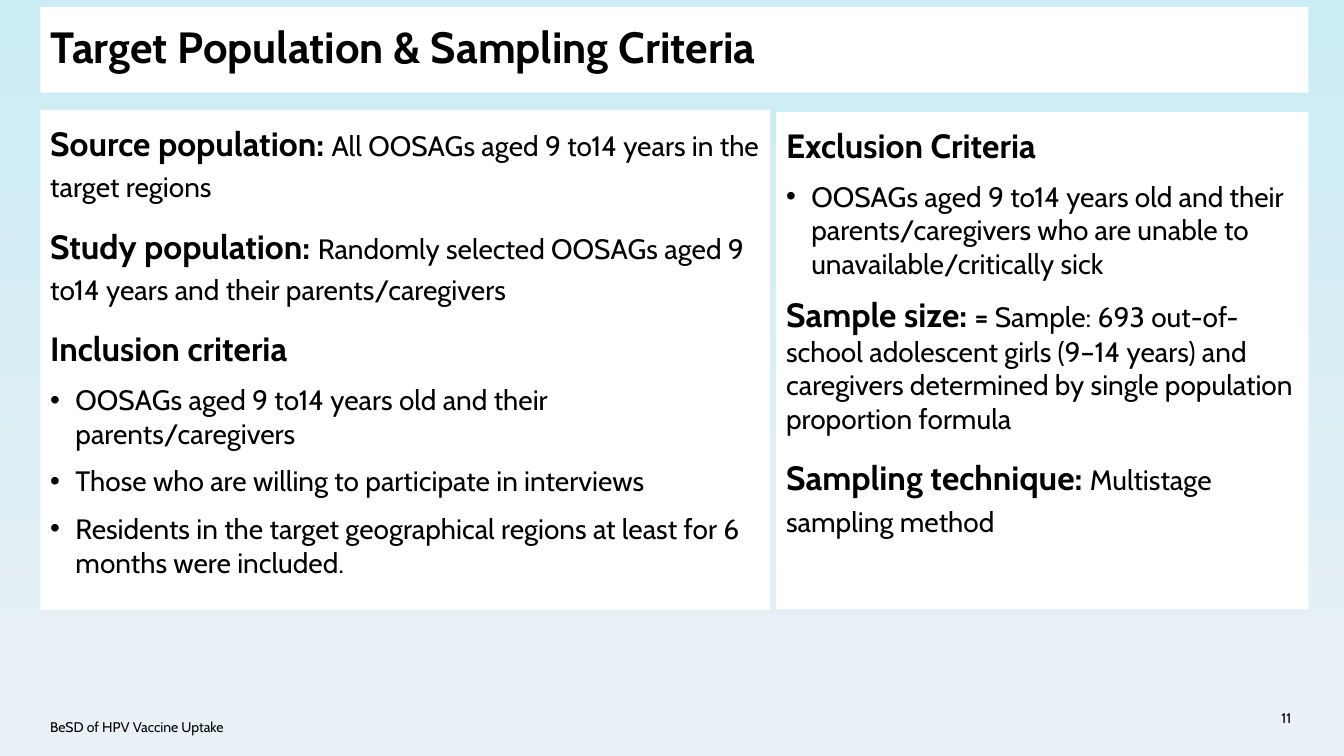
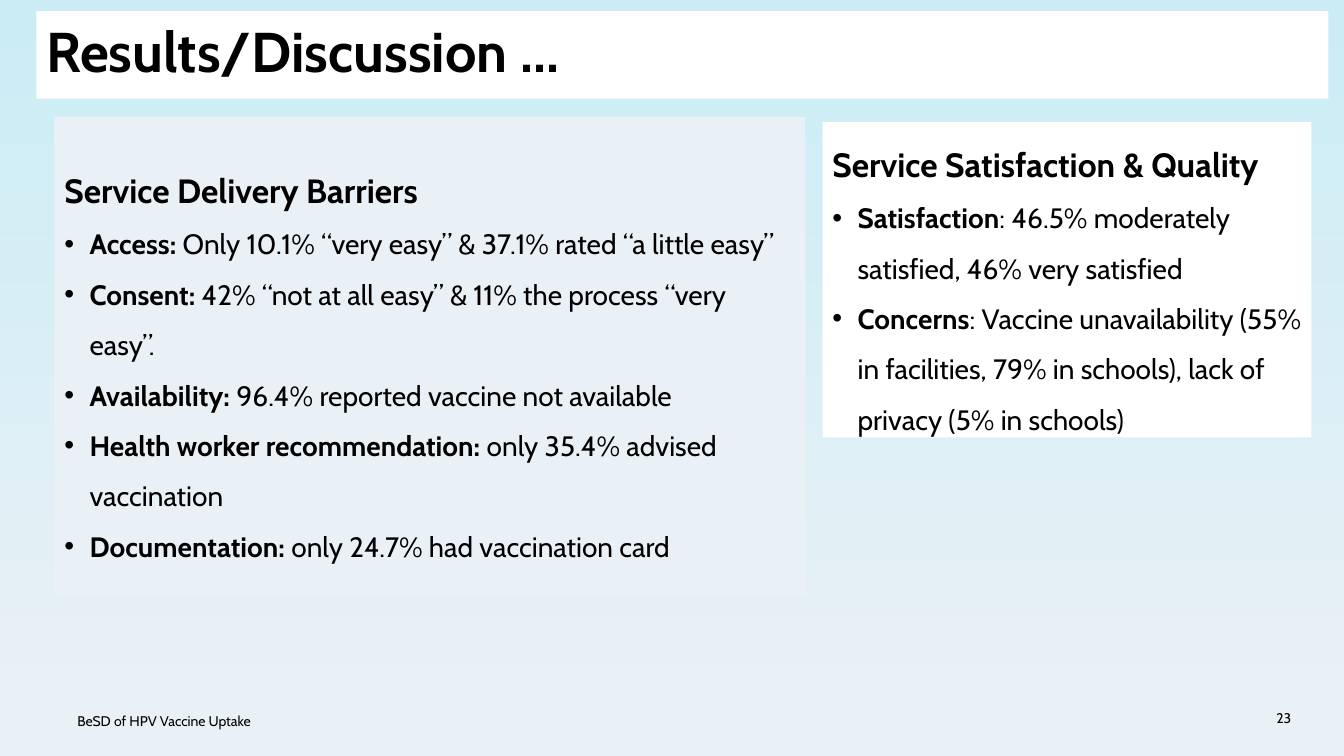
from dataclasses import dataclass

from lxml.etree import SubElement
from pptx import Presentation
from pptx.dml.color import RGBColor
from pptx.enum.shapes import MSO_SHAPE
from pptx.enum.text import MSO_ANCHOR, PP_ALIGN
from pptx.oxml.ns import qn
from pptx.util import Pt


@dataclass(frozen=True)
class Theme:
    font: str = "Cabin"
    ink: str = "000000"
    white: str = "FFFFFF"
    sky: str = "CBECF5"
    mist: str = "EAF1F6"
    title: float = 31.2
    big_title: float = 40
    head: float = 24
    body: float = 20
    small: float = 10
    indent: float = 18


THEME = Theme()
RUN_STYLES = {
    "title": {"size": Pt(THEME.title), "bold": True},
    "big_title": {"size": Pt(THEME.big_title), "bold": True},
    "head": {"size": Pt(THEME.head), "bold": True},
    "bold": {"size": Pt(THEME.body), "bold": True},
    "body": {"size": Pt(THEME.body), "bold": False},
    "small": {"size": Pt(THEME.small), "bold": False},
}
LOOSE = {"line_spacing": 1.2, "space_before": Pt(10)}
SINGLE = {"line_spacing": 1.0, "space_before": Pt(10)}
OPEN = {"line_spacing": 1.5, "space_before": Pt(0)}
PLAIN = {"line_spacing": 1.0, "space_before": Pt(0)}
TITLE = {"line_spacing": 0.9, "space_before": Pt(0)}

FOOTER = "BeSD of HPV Vaccine Uptake"
NUMBER_BOX = (869, 498.2, 60.5, 28.8)
FOOTER_SIZE = (525.6, 28.8)


def heading(text, rest="", spacing=LOOSE):
    return {"runs": [(text, "head"), (rest, "body")], "spacing": spacing}


def bullet(lead, rest, spacing=OPEN):
    return {"runs": [(lead, "bold"), (rest, "body")], "spacing": spacing,
            "bullet": True}


# Boxes are left, top, width, height in points.
SLIDES = [
    {
        "title": ("Target Population & Sampling Criteria", "title"),
        "title_box": (28.8, 5, 905.8, 61.2),
        "number": "11",
        "footer_at": (28.8, 504.7),
        "panels": [
            {"box": (28.8, 78.5, 521.3, 357), "fill": THEME.white,
             "anchor": MSO_ANCHOR.TOP, "paragraphs": [
                heading("Source population: ",
                        "All OOSAGs aged 9 to14 years in the target regions"),
                heading("Study population: ",
                        "Randomly selected OOSAGs aged 9 to14 years and their "
                        "parents/caregivers"),
                heading("Inclusion criteria"),
                bullet("", "OOSAGs aged 9 to14 years old and their "
                       "parents/caregivers", SINGLE),
                bullet("", "Those who are willing to participate in interviews",
                       SINGLE),
                bullet("", "Residents in the target geographical regions at "
                       "least for 6 months were included.", SINGLE),
            ]},
            {"box": (554.4, 79.9, 380.2, 355), "fill": THEME.white,
             "anchor": MSO_ANCHOR.TOP, "paragraphs": [
                heading("Exclusion Criteria"),
                bullet("", "OOSAGs aged 9 to14 years old and their "
                       "parents/caregivers who are unable to "
                       "unavailable/critically sick", SINGLE),
                {"runs": [("Sample size: ", "head"), ("= ", "bold"),
                          ("Sample: 693 out-of-school adolescent girls "
                           "(9–14 years) and caregivers determined by single "
                           "population proportion formula", "body")],
                 "spacing": SINGLE},
                heading("Sampling technique: ", "Multistage sampling method"),
            ]},
        ],
    },
    {
        "title": ("Results/Discussion ...", "big_title"),
        "title_box": (25.9, 7.9, 923, 62.6),
        "number": "23",
        "footer_at": (48.2, 500.4),
        "panels": [
            {"box": (38.9, 83.5, 536.4, 342), "fill": THEME.mist,
             "anchor": MSO_ANCHOR.MIDDLE, "paragraphs": [
                heading("Service Delivery Barriers", spacing=OPEN),
                bullet("Access: ",
                       "Only 10.1% “very easy” & 37.1% rated “a little easy”"),
                bullet("Consent: ",
                       "42% “not at all easy” & 11% the process “very easy”."),
                bullet("Availability: ",
                       "96.4% reported vaccine not available"),
                bullet("Health worker recommendation: ",
                       "only 35.4% advised vaccination"),
                bullet("Documentation: ", "only 24.7% had vaccination card"),
            ]},
            {"box": (587.5, 87.1, 349.2, 225.4), "fill": THEME.white,
             "anchor": MSO_ANCHOR.MIDDLE, "paragraphs": [
                heading("Service Satisfaction & Quality", spacing=OPEN),
                bullet("Satisfaction",
                       ": 46.5% moderately satisfied, 46% very satisfied"),
                bullet("Concerns",
                       ": Vaccine unavailability (55% in facilities, 79% in "
                       "schools), lack of privacy (5% in schools)"),
            ]},
        ],
    },
]


def apply(target, values):
    for name, value in values.items():
        setattr(target, name, value)


def add_bullet(p):
    pPr = p._p.get_or_add_pPr()
    pPr.set("marL", str(Pt(THEME.indent)))
    pPr.set("indent", str(-Pt(THEME.indent)))
    color = SubElement(pPr, qn("a:buClr"))
    SubElement(color, qn("a:srgbClr"), val=THEME.ink)
    SubElement(pPr, qn("a:buFont"), typeface="Arial")
    SubElement(pPr, qn("a:buChar"), char="•")


def add_run(p, text, style):
    r = p.add_run()
    r.text = text
    apply(r.font, {"name": THEME.font, **RUN_STYLES[style]})
    r.font.color.rgb = RGBColor.from_string(THEME.ink)


def write(sp, paragraphs, anchor, align=PP_ALIGN.LEFT):
    tf = sp.text_frame
    apply(tf, {"word_wrap": True, "vertical_anchor": anchor})
    for i, item in enumerate(paragraphs):
        p = tf.add_paragraph() if i else tf.paragraphs[0]
        apply(p, {"alignment": align, **item["spacing"]})
        if i == 0:
            p.space_before = Pt(0)
        if item.get("bullet"):
            add_bullet(p)
        for text, style in item["runs"]:
            if text:
                add_run(p, text, style)


def add_panel(s, box, fill, paragraphs, anchor):
    sp = s.shapes.add_shape(MSO_SHAPE.RECTANGLE, *map(Pt, box))
    sp.shadow.inherit = False
    sp.fill.solid()
    sp.fill.fore_color.rgb = RGBColor.from_string(fill)
    sp.line.fill.background()
    write(sp, paragraphs, anchor)


def add_label(s, box, text, align):
    sp = s.shapes.add_textbox(*map(Pt, box))
    write(sp, [{"runs": [(text, "small")], "spacing": PLAIN}],
          MSO_ANCHOR.MIDDLE, align)


def set_background(master):
    fill = master.background.fill
    fill.gradient()
    fill.gradient_angle = 270
    for stop, color in zip(fill.gradient_stops, (THEME.sky, THEME.mist)):
        stop.color.rgb = RGBColor.from_string(color)


def add_slide(prs, content):
    s = prs.slides.add_slide(prs.slide_layouts[6])
    title = {"runs": [content["title"]], "spacing": TITLE}
    add_panel(s, content["title_box"], THEME.white, [title], MSO_ANCHOR.MIDDLE)
    for panel in content["panels"]:
        add_panel(s, **panel)
    add_label(s, NUMBER_BOX, content["number"], PP_ALIGN.RIGHT)
    add_label(s, content["footer_at"] + FOOTER_SIZE, FOOTER, PP_ALIGN.LEFT)


def main():
    prs = Presentation()
    apply(prs, {"slide_width": Pt(960), "slide_height": Pt(540)})
    set_background(prs.slide_master)
    for content in SLIDES:
        add_slide(prs, content)
    prs.save("out.pptx")


if __name__ == "__main__":
    main()
